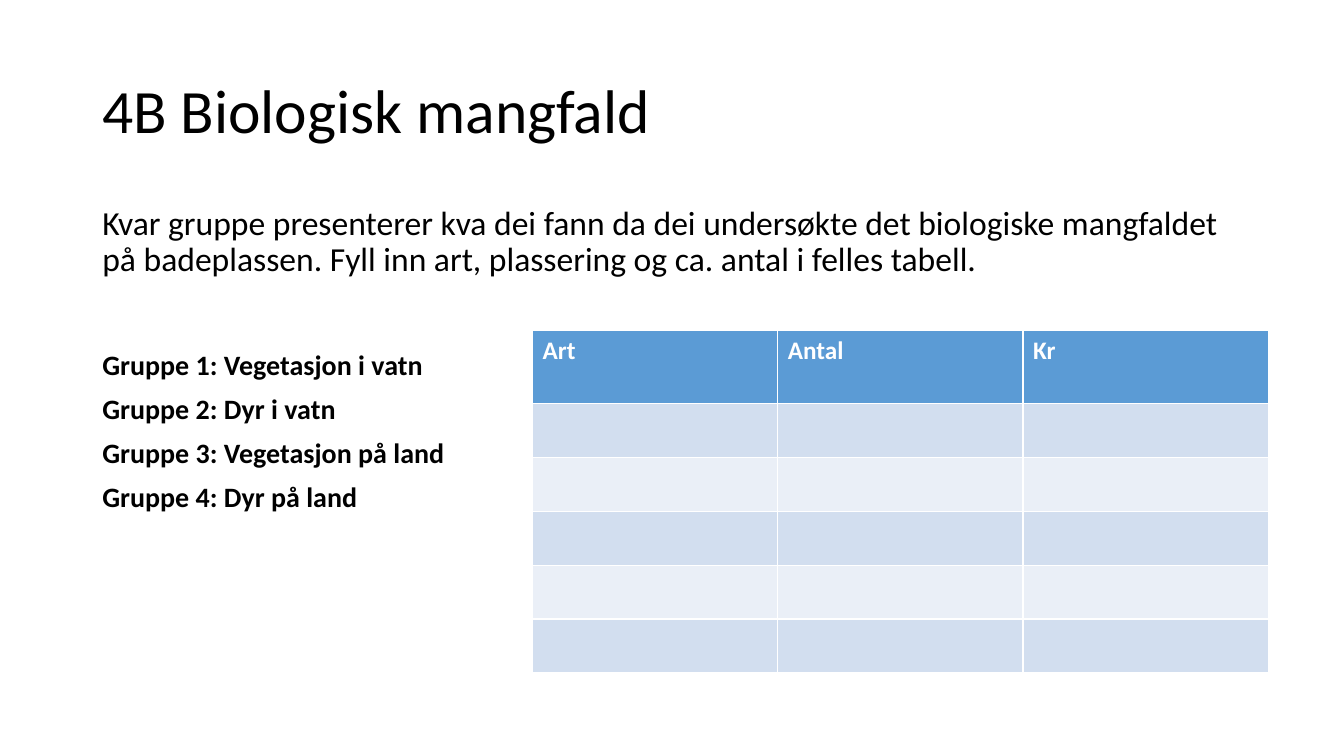
from pptx import Presentation
from pptx.dml.color import RGBColor
from pptx.enum.text import MSO_ANCHOR
from pptx.util import Cm, Pt

MIDDLE = MSO_ANCHOR.MIDDLE
TOP = MSO_ANCHOR.TOP
FONT = "Calibri"
BLACK = "000000"
WHITE = "FFFFFF"
HEADER_FILL = "5B9BD5"
BAND_FILLS = ["D2DEEF", "EAEFF7"]

TITLE = "4B Biologisk mangfald"
INTRODUCTION = (
    "Kvar gruppe presenterer kva dei fann da dei undersøkte det biologiske "
    "mangfaldet på badeplassen. Fyll inn art, plassering og ca. antal i felles tabell."
)
GROUPS = [
    "Gruppe 1: Vegetasjon i vatn",
    "Gruppe 2: Dyr i vatn",
    "Gruppe 3: Vegetasjon på land",
    "Gruppe 4: Dyr på land",
]
HEADINGS = ["Art", "Antal", "Kr"]
EMPTY_ROWS = 5


def color(value):
    return RGBColor.from_string(value)


def format_runs(paragraph, size, text_color, bold=False):
    for run in paragraph.runs:
        run.font.name = FONT
        run.font.size = Pt(size)
        run.font.bold = bold
        run.font.color.rgb = color(text_color)


def add_text(slide, lines, left, top, width, height, size, bold=False, anchor=TOP):
    shape = slide.shapes.add_textbox(Cm(left), Cm(top), Cm(width), Cm(height))
    text_frame = shape.text_frame
    text_frame.word_wrap = True
    text_frame.vertical_anchor = anchor
    text_frame.text = "\n".join(lines)
    for paragraph in text_frame.paragraphs:
        paragraph.line_spacing = 0.9
        paragraph.space_before = Pt(10)
        format_runs(paragraph, size, BLACK, bold)


def fill_cell(cell, value):
    cell.fill.solid()
    cell.fill.fore_color.rgb = color(value)


def add_species_table(slide, left, top, column_width, header_height, row_height):
    width = column_width * len(HEADINGS)
    height = header_height + row_height * EMPTY_ROWS
    table = slide.shapes.add_table(
        EMPTY_ROWS + 1, len(HEADINGS), Cm(left), Cm(top), Cm(width), Cm(height)
    ).table
    for column in table.columns:
        column.width = Cm(column_width)
    for row in table.rows:
        row.height = Cm(row_height)
    table.rows[0].height = Cm(header_height)

    for index, heading in enumerate(HEADINGS):
        cell = table.cell(0, index)
        cell.text_frame.text = heading
        format_runs(cell.text_frame.paragraphs[0], 18, WHITE, bold=True)
        fill_cell(cell, HEADER_FILL)
        for band in range(EMPTY_ROWS):
            fill_cell(table.cell(band + 1, index), BAND_FILLS[band % 2])


def main():
    presentation = Presentation()
    presentation.slide_width = Cm(33.87)
    presentation.slide_height = Cm(19.05)
    slide = presentation.slides.add_slide(presentation.slide_layouts[6])

    add_text(slide, [TITLE], 2.33, 1.01, 29.21, 3.68, 44, anchor=MIDDLE)
    add_text(slide, [INTRODUCTION], 2.33, 5.07, 29.21, 2.2, 24)
    add_text(slide, GROUPS, 2.33, 8.72, 10.5, 4.5, 20, bold=True)
    add_species_table(slide, 13.42, 8.32, 6.18, 1.84, 1.36)

    presentation.save("out.pptx")


if __name__ == "__main__":
    main()
